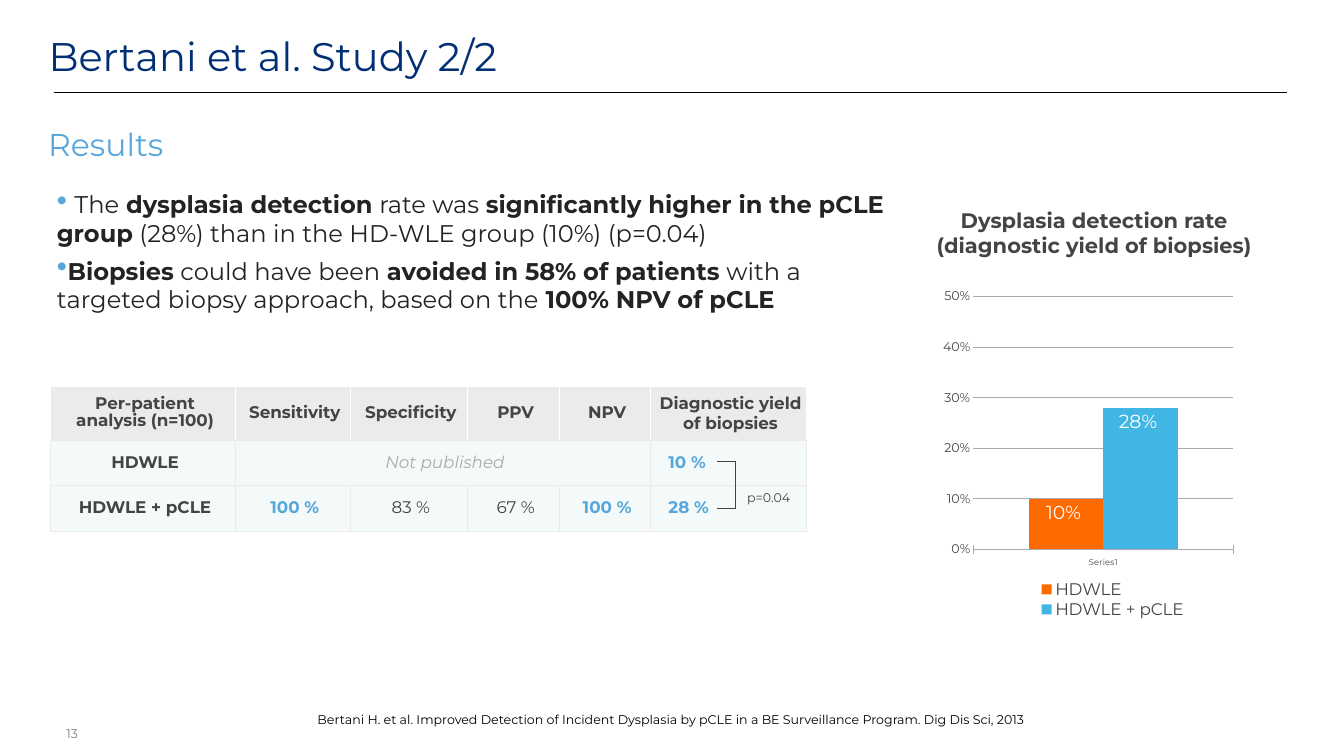
from lxml import etree
from pptx import Presentation
from pptx.chart.data import CategoryChartData
from pptx.dml.color import RGBColor
from pptx.enum.chart import XL_CHART_TYPE as CT, XL_LABEL_POSITION as LP
from pptx.enum.chart import XL_LEGEND_POSITION as LEG, XL_TICK_LABEL_POSITION as TLP
from pptx.enum.chart import XL_TICK_MARK as TM
from pptx.enum.shapes import MSO_CONNECTOR
from pptx.enum.text import MSO_ANCHOR, MSO_AUTO_SIZE, PP_ALIGN
from pptx.oxml.ns import qn
from pptx.util import Cm, Pt

FONT = "Montserrat"
NAVY = RGBColor(0x00, 0x2F, 0x73)
SKY = RGBColor(0x58, 0xA7, 0xDA)
INK = RGBColor(0x23, 0x23, 0x23)
DARK = RGBColor(0x44, 0x44, 0x44)
MID = RGBColor(0x81, 0x81, 0x81)
GREY = RGBColor(0xAA, 0xAA, 0xAA)
PALE = RGBColor(0xEB, 0xEB, 0xEB)
MIST = RGBColor(0xF4, 0xFA, 0xFA)
ORANGE = RGBColor(0xFF, 0x6A, 0x00)
BLUE = RGBColor(0x41, 0xB6, 0xE4)
BLACK = RGBColor(0, 0, 0)
WHITE = RGBColor(0xFF, 0xFF, 0xFF)
LEFT, CENTER, RIGHT = PP_ALIGN.LEFT, PP_ALIGN.CENTER, PP_ALIGN.RIGHT


def style_font(font, size, color, bold=False, italic=False):
    font.name, font.size = FONT, Pt(size)
    font.bold, font.italic = bold, italic
    font.color.rgb = color


def add_text(p, text, size=16, color=DARK, bold=False, italic=False, align=LEFT):
    p.alignment = align
    for i, line in enumerate(text.split("\n")):
        if i:
            p.add_line_break()
        r = p.add_run()
        r.text = line
        style_font(r.font, size, color, bold, italic)


def add_box(s, left, top, width, height, wrap=True, anchor=MSO_ANCHOR.TOP):
    tf = s.shapes.add_textbox(Cm(left), Cm(top), Cm(width), Cm(height)).text_frame
    tf.word_wrap, tf.vertical_anchor = wrap, anchor
    tf.margin_left = tf.margin_right = tf.margin_top = tf.margin_bottom = Cm(0.1)
    return tf


def add_line(s, x1, y1, x2, y2, color, weight):
    line = s.shapes.add_connector(MSO_CONNECTOR.STRAIGHT, Cm(x1), Cm(y1), Cm(x2), Cm(y2))
    line.line.color.rgb, line.line.width = color, Pt(weight)
    etree.SubElement(line._element.spPr, qn("a:effectLst"))


def add_bullet(p):
    pPr = p._p.get_or_add_pPr()
    pPr.set("marL", str(Cm(0.08)))
    pPr.set("indent", "0")
    color = etree.SubElement(pPr, qn("a:buClr"))
    etree.SubElement(color, qn("a:srgbClr"), val=str(SKY))
    etree.SubElement(pPr, qn("a:buSzPct"), val="125000")
    etree.SubElement(pPr, qn("a:buChar"), char="•")


def add_header(s, left, top, width, height):
    title = s.shapes.title
    title.left, title.top, title.width, title.height = Cm(left), Cm(top), Cm(width), Cm(height)
    tf = title.text_frame
    tf.auto_size, tf.vertical_anchor = MSO_AUTO_SIZE.NONE, MSO_ANCHOR.MIDDLE
    tf.margin_left = tf.margin_right = tf.margin_top = tf.margin_bottom = 0
    add_text(tf.paragraphs[0], "Bertani et al. Study 2/2", size=38, color=NAVY)
    add_line(s, left + 0.17, top + 2.49, left + 41.63, top + 2.49, BLACK, 0.25)


def add_results(s, left, top, width, height):
    tf = add_box(s, left, top, 4.09, 1.27, wrap=False)
    add_text(tf.paragraphs[0], "Results", size=30, color=SKY)
    findings = [
        [(" ", True), ("The", False), (" dysplasia detection", True), (" rate was ", False),
         ("significantly higher in the pCLE group", True),
         (" (28%) than in the HD-WLE group (10%) (p=0.04)", False)],
        [("Biopsies", True), (" could have been ", False),
         ("avoided in 58% of patients", True),
         (" with a targeted biopsy approach, based on the ", False),
         ("100% NPV of pCLE", True)],
    ]
    tf = add_box(s, left + 0.21, top + 2.16, width - 0.21, height - 2.16)
    for i, runs in enumerate(findings):
        p = tf.add_paragraph() if i else tf.paragraphs[0]
        if i:
            p.space_before = Pt(8)
        add_bullet(p)
        for text, bold in runs:
            add_text(p, text, size=23, color=INK, bold=bold)


def set_borders(cell, left, right, top, bottom):
    tcPr = cell._tc.get_or_add_tcPr()
    sides = zip(("a:lnL", "a:lnR", "a:lnT", "a:lnB"), (left, right, top, bottom))
    for i, (tag, color) in enumerate(sides):
        ln = etree.Element(qn(tag), w=str(Pt(1)))
        fill = etree.SubElement(ln, qn("a:solidFill"))
        etree.SubElement(fill, qn("a:srgbClr"), val=str(color))
        tcPr.insert(i, ln)


def fill_cell(cell, text, header=False, margin=0.1, tight=True, **fmt):
    cell.fill.solid()
    cell.fill.fore_color.rgb = PALE if header else MIST
    edge = WHITE if header else PALE
    set_borders(cell, edge, edge, edge, PALE)
    cell.vertical_anchor = MSO_ANCHOR.MIDDLE
    cell.margin_left = cell.margin_right = cell.margin_top = cell.margin_bottom = Cm(margin)
    p = cell.text_frame.paragraphs[0]
    p._p.get_or_add_pPr().set("marL", str(Cm(0.15)))
    if tight:
        p.line_spacing = 0.83
    add_text(p, text, **{"align": CENTER, **fmt})


def add_analysis(s, left, top, width, height):
    tbl = s.shapes.add_table(3, 6, Cm(left), Cm(top), Cm(width), Cm(height)).table
    tbl.horz_banding = tbl.first_row = False
    for col, w in zip(tbl.columns, (6.2, 3.86, 3.94, 3.1, 3.05, 5.25)):
        col.width = Cm(w)
    for row, h in zip(tbl.rows, (1.81, 1.53, 1.53)):
        row.height = Cm(h)
    label = dict(bold=True)
    strong = dict(color=SKY, bold=True, margin=0.38)
    plain = dict(margin=0.38)
    total = dict(color=SKY, bold=True, margin=0.46, align=LEFT)
    heads = ["Per-patient analysis (n=100)", "Sensitivity", "Specificity", "PPV", "NPV",
             "Diagnostic yield of biopsies"]
    for c, text in enumerate(heads):
        fill_cell(tbl.cell(0, c), text, header=True, tight=c < 5, **label)
    rows = [
        [("HDWLE", label), ("Not published", dict(color=GREY, italic=True, margin=0.38)),
         ("", {}), ("", {}), ("", {}), ("10 %", total)],
        [("HDWLE + pCLE", label), ("100 %", strong), ("83 %", plain), ("67 %", {}),
         ("100 %", strong), ("28 %", total)],
    ]
    tbl.cell(1, 1).merge(tbl.cell(1, 4))
    for r, row in enumerate(rows, 1):
        for c, (text, fmt) in enumerate(row):
            fill_cell(tbl.cell(r, c), text, **fmt)
    add_p_value(s, left + 22.4, top + 2.51, 2.9, 1.6)


def add_p_value(s, left, top, width, height):
    spine = left + 0.61
    add_line(s, spine, top, spine, top + height, DARK, 1)
    for y in (top, top + height):
        add_line(s, left, y, spine, y, DARK, 1)
    tf = add_box(s, spine - 0.05, top + 0.87, width - 0.56, 0.74)
    add_text(tf.paragraphs[0], "p=0.04", size=12, align=CENTER)


def set_layout(parent, index, x, y, w, h, inner=False):
    for old in parent.findall(qn("c:layout")):
        parent.remove(old)
    layout = etree.Element(qn("c:layout"))
    manual = etree.SubElement(layout, qn("c:manualLayout"))
    if inner:
        etree.SubElement(manual, qn("c:layoutTarget"), val="inner")
    for tag in ("c:xMode", "c:yMode"):
        etree.SubElement(manual, qn(tag), val="edge")
    for tag, value in zip(("c:x", "c:y", "c:w", "c:h"), (x, y, w, h)):
        etree.SubElement(manual, qn(tag), val=str(value))
    parent.insert(index, layout)


def add_detection_chart(s, left, top, width, height):
    tf = add_box(s, left, top, width, 1.73)
    add_text(tf.paragraphs[0], "Dysplasia detection rate\n(diagnostic yield of biopsies)",
             size=20, bold=True, align=CENTER)
    data = CategoryChartData()
    data.categories = ["Series1"]
    data.add_series("HDWLE", [0.1])
    data.add_series("HDWLE + pCLE", [0.28])
    chart = s.shapes.add_chart(CT.COLUMN_CLUSTERED, Cm(left + 1.27), Cm(top + 2.77),
                               Cm(10.41), Cm(height - 2.77), data).chart
    chart.has_title = False
    style_font(chart.font, 10, BLACK)
    plot = chart.plots[0]
    plot.gap_width, plot.overlap, plot.vary_by_categories = 150, 0, False
    for series, color in zip(plot.series, (ORANGE, BLUE)):
        series.format.fill.solid()
        series.format.fill.fore_color.rgb = color
        labels = series.data_labels
        labels.show_value, labels.position = True, LP.INSIDE_END
        labels.number_format = r"#,##0%_);\(#,##0%\)"
        labels.number_format_is_linked = False
        style_font(labels.font, 18, WHITE)
    cat, val = chart.category_axis, chart.value_axis
    cat.major_tick_mark, cat.tick_label_position = TM.CROSS, TLP.LOW
    cat.format.line.color.rgb, cat.format.line.width = GREY, Pt(1)
    style_font(cat.tick_labels.font, 8, DARK)
    val.minimum_scale, val.maximum_scale, val.major_unit = 0, 0.5, 0.1
    val.major_tick_mark = TM.INSIDE
    val.format.line.fill.background()
    grid = val.major_gridlines.format.line
    grid.color.rgb, grid.width = GREY, Pt(1)
    val.tick_labels.number_format = "0%"
    val.tick_labels.number_format_is_linked = False
    style_font(val.tick_labels.font, 12, DARK)
    chart.has_legend = True
    legend = chart.legend
    legend.position, legend.include_in_layout = LEG.BOTTOM, True
    style_font(legend.font, 16, DARK)
    set_layout(legend._element, 1, 0.35, 0.88, 0.5, 0.12)
    set_layout(chart._chartSpace.chart.plotArea, 0, 0.15, 0.03, 0.84, 0.76, inner=True)


def add_footer(s, left, top, width, height):
    tf = add_box(s, left, top, width, height)
    add_text(tf.paragraphs[0], "Bertani H. et al. Improved Detection of Incident Dysplasia by "
             "pCLE in a BE Surveillance Program. Dig Dis Sci, 2013",
             size=12, color=BLACK, align=CENTER)
    tf = add_box(s, left + 1.17, top + 0.48, 0.71, height, wrap=False, anchor=MSO_ANCHOR.MIDDLE)
    add_text(tf.paragraphs[0], "13", size=12, color=MID, align=RIGHT)


def main():
    prs = Presentation()
    prs.slide_width, prs.slide_height = Cm(45.16), Cm(25.4)
    s = prs.slides.add_slide(prs.slide_layouts[5])
    add_header(s, 1.63, 0.61, 41.35, 2.51)
    add_results(s, 1.52, 4.11, 28.63, 6.45)
    add_analysis(s, 1.7, 12.98, 25.4, 4.87)
    add_detection_chart(s, 29.87, 6.86, 13.79, 13.95)
    add_footer(s, 0.84, 23.83, 43.43, 0.64)
    prs.save("out.pptx")


if __name__ == "__main__":
    main()
